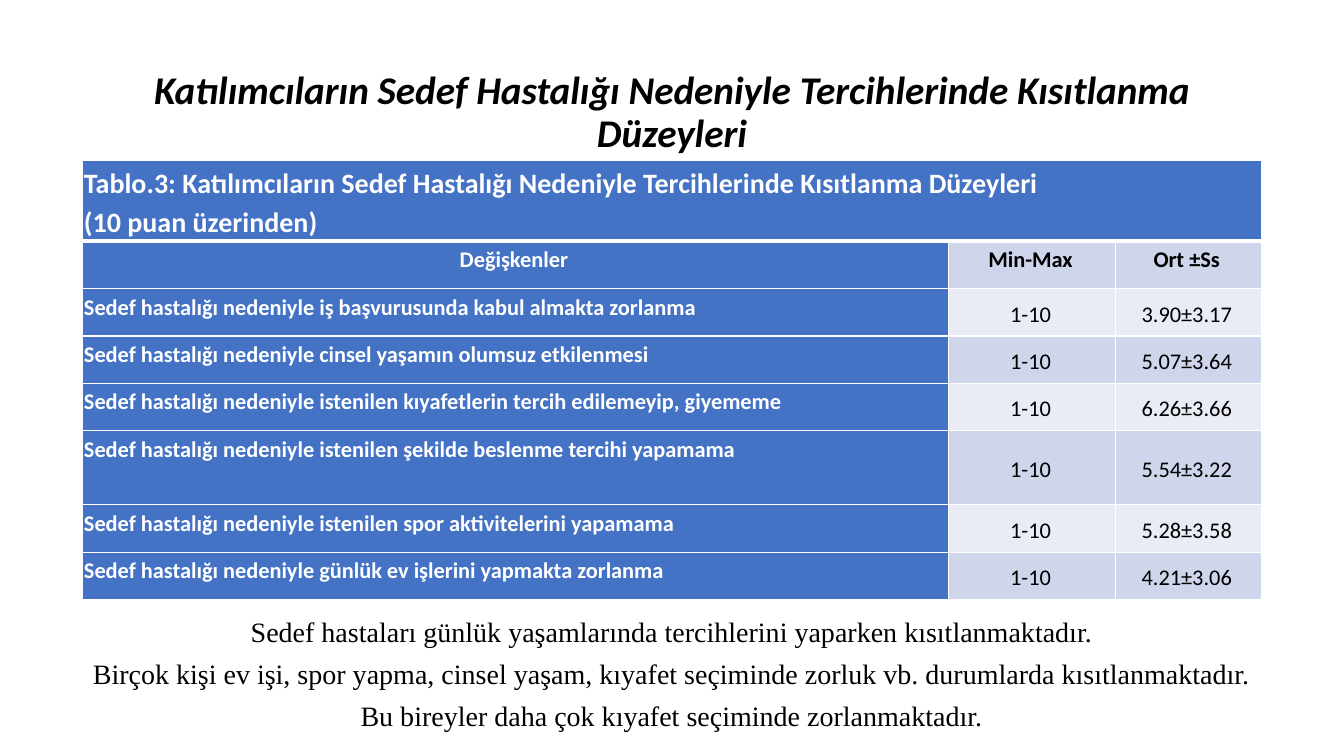
"""Builds a slide on how strongly psoriasis restricts the participants' choices."""
from typing import NamedTuple

from lxml import etree
from pptx import Presentation
from pptx.dml.color import RGBColor
from pptx.enum.text import MSO_ANCHOR, MSO_AUTO_SIZE, PP_ALIGN
from pptx.oxml.ns import qn
from pptx.util import Pt

LEFT, CENTER = PP_ALIGN.LEFT, PP_ALIGN.CENTER
TOP, MIDDLE = MSO_ANCHOR.TOP, MSO_ANCHOR.MIDDLE
NO_AUTOFIT = MSO_AUTO_SIZE.NONE
GROW_TO_TEXT = MSO_AUTO_SIZE.SHAPE_TO_FIT_TEXT

BLACK = RGBColor(0x00, 0x00, 0x00)
WHITE = RGBColor(0xFF, 0xFF, 0xFF)
BLUE = RGBColor(0x44, 0x72, 0xC4)
BANDS = (RGBColor(0xCF, 0xD5, 0xEA), RGBColor(0xE9, 0xEB, 0xF5))

TITLE_ONLY = 5
HEADING = "Katılımcıların Sedef Hastalığı Nedeniyle Tercihlerinde Kısıtlanma Düzeyleri"
CAPTION = f"Tablo.3: {HEADING}\n(10 puan üzerinden)"
COLUMN_HEADS = ("Değişkenler", "Min-Max", "Ort ±Ss")
COLUMN_WIDTHS = (619.2, 118.8, 104.4)
SCORE_RANGE = "1-10"
ROW_HEIGHT = 33.9
CONCLUSIONS = (
    "Sedef hastaları günlük yaşamlarında tercihlerini yaparken kısıtlanmaktadır.",
    "Birçok kişi ev işi, spor yapma, cinsel yaşam, kıyafet seçiminde zorluk vb. "
    "durumlarda kısıtlanmaktadır.",
    "Bu bireyler daha çok kıyafet seçiminde zorlanmaktadır.",
)


class Restriction(NamedTuple):
    """A restricted choice with its mean score and row height."""
    effect: str
    mean: str
    height: float = ROW_HEIGHT


class CellStyle(NamedTuple):
    """The look of a table cell."""
    fill: RGBColor
    color: RGBColor
    bold: bool = True
    align: PP_ALIGN = CENTER
    anchor: MSO_ANCHOR = TOP
    size: float = 16
    bottom_border: float = 1


RESTRICTIONS = (
    Restriction("iş başvurusunda kabul almakta zorlanma", "3.90±3.17"),
    Restriction("cinsel yaşamın olumsuz etkilenmesi", "5.07±3.64"),
    Restriction("istenilen kıyafetlerin tercih edilemeyip, giyememe", "6.26±3.66"),
    Restriction("istenilen şekilde beslenme tercihi yapamama", "5.54±3.22", 52.8),
    Restriction("istenilen spor aktivitelerini yapamama", "5.28±3.58"),
    Restriction("günlük ev işlerini yapmakta zorlanma", "4.21±3.06"),
)
CAPTION_STYLE = CellStyle(BLUE, WHITE, align=LEFT, size=20, bottom_border=3)
EFFECT_STYLE = CellStyle(BLUE, WHITE, align=LEFT)


def add_border(cell, side: str, width: float) -> None:
    """Draw a white line on one side of a cell."""
    border = etree.SubElement(cell._tc.get_or_add_tcPr(), qn(f"a:ln{side}"), w=str(Pt(width)))
    solid = etree.SubElement(border, qn("a:solidFill"))
    etree.SubElement(solid, qn("a:srgbClr"), val=str(WHITE))


def fill_cell(cell, text: str, style: CellStyle) -> None:
    """Write text into a cell and apply its style."""
    for side in "LRT":
        add_border(cell, side, 1)
    add_border(cell, "B", style.bottom_border)
    cell.fill.solid()
    cell.fill.fore_color.rgb = style.fill
    cell.margin_left, cell.margin_right = Pt(1.4), Pt(3.6)
    cell.margin_top = cell.margin_bottom = Pt(0.7)
    cell.vertical_anchor = style.anchor
    cell.text_frame.text = text
    for paragraph in cell.text_frame.paragraphs:
        paragraph.alignment = style.align
        paragraph.line_spacing = 1.15
        font = paragraph.font
        font.name, font.size, font.bold = "Calibri", Pt(style.size), style.bold
        font.color.rgb = style.color


def add_title(slide) -> None:
    """Place and format the slide title."""
    title = slide.shapes.title
    title.left, title.top, title.width, title.height = Pt(66), Pt(28.8), Pt(828), Pt(104.4)
    frame = title.text_frame
    frame.text = HEADING
    frame.auto_size = NO_AUTOFIT
    frame.vertical_anchor = MIDDLE
    paragraph = frame.paragraphs[0]
    paragraph.alignment = CENTER
    paragraph.line_spacing = 0.9
    font = paragraph.font
    font.name, font.size, font.bold, font.italic = "Calibri", Pt(28), True, True
    font.color.rgb = BLACK


def add_score_table(slide) -> None:
    """Add the table of restriction scores."""
    heights = [ROW_HEIGHT] * 2 + [item.height for item in RESTRICTIONS]
    table = slide.shapes.add_table(
        len(heights), len(COLUMN_WIDTHS), Pt(58.6), Pt(114.6),
        Pt(sum(COLUMN_WIDTHS)), Pt(sum(heights))).table
    table.first_col = True
    for column, width in zip(table.columns, COLUMN_WIDTHS):
        column.width = Pt(width)
    for row, height in zip(table.rows, heights):
        row.height = Pt(height)

    table.cell(0, 0).merge(table.cell(0, 2))
    for column, text in enumerate((CAPTION, "", "")):
        fill_cell(table.cell(0, column), text, CAPTION_STYLE)
    for column, text in enumerate(COLUMN_HEADS):
        style = CellStyle(BANDS[0], BLACK) if column else CellStyle(BLUE, WHITE)
        fill_cell(table.cell(1, column), text, style)
    for row, item in enumerate(RESTRICTIONS, start=2):
        score_style = CellStyle(BANDS[(row - 1) % 2], BLACK, bold=False, anchor=MIDDLE)
        fill_cell(table.cell(row, 0), f"Sedef hastalığı nedeniyle {item.effect}", EFFECT_STYLE)
        fill_cell(table.cell(row, 1), SCORE_RANGE, score_style)
        fill_cell(table.cell(row, 2), item.mean, score_style)


def add_conclusions(slide) -> None:
    """Add the concluding sentences below the table."""
    frame = slide.shapes.add_textbox(Pt(51.8), Pt(435.6), Pt(856.1), Pt(92.2)).text_frame
    frame.word_wrap = True
    frame.auto_size = GROW_TO_TEXT
    frame.text = "\n".join(CONCLUSIONS)
    for paragraph in frame.paragraphs:
        paragraph.alignment = CENTER
        paragraph.space_after = Pt(6)
        font = paragraph.font
        font.name, font.size = "Times New Roman", Pt(20)
        font.color.rgb = BLACK


def main() -> None:
    """Build and save the presentation."""
    presentation = Presentation()
    presentation.slide_width, presentation.slide_height = Pt(960), Pt(540)
    slide = presentation.slides.add_slide(presentation.slide_layouts[TITLE_ONLY])
    add_title(slide)
    add_score_table(slide)
    add_conclusions(slide)
    presentation.save("out.pptx")


if __name__ == "__main__":
    main()
